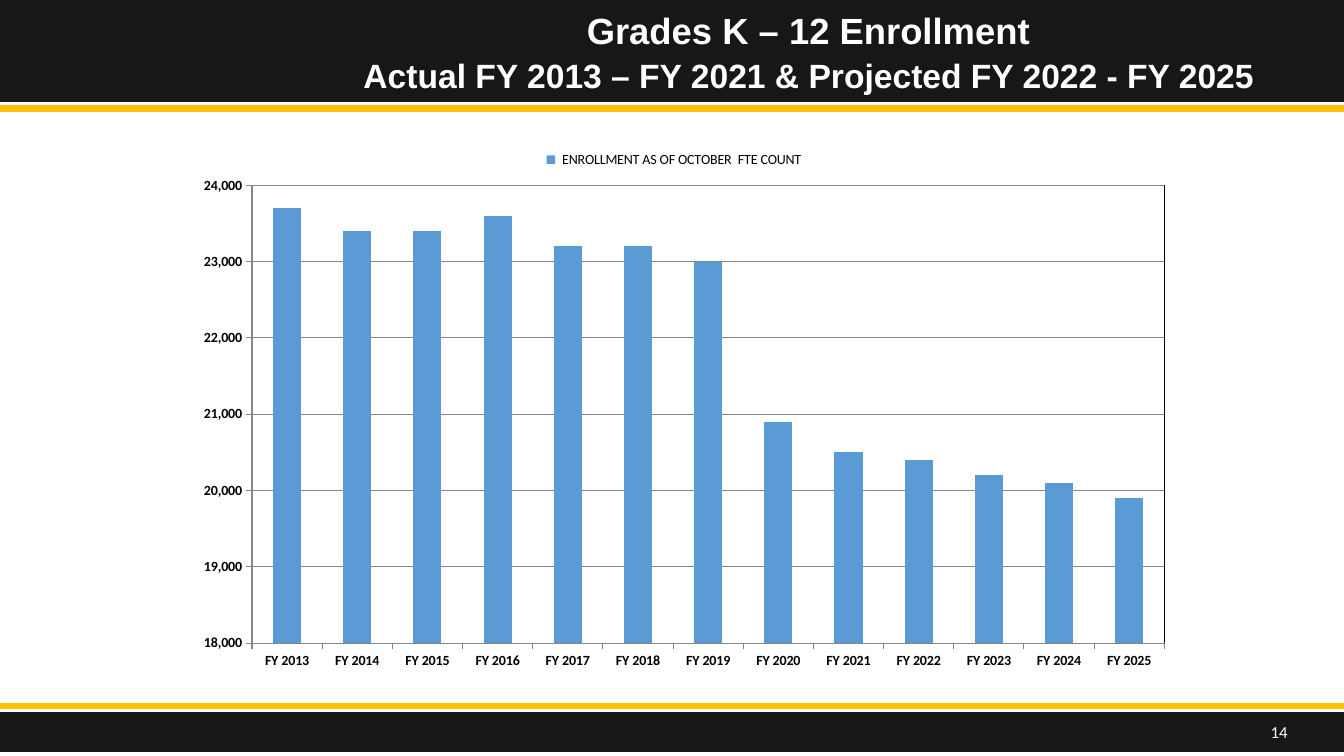
from dataclasses import dataclass

from lxml.etree import SubElement
from pptx import Presentation
from pptx.chart.chart import Chart
from pptx.chart.data import CategoryChartData
from pptx.dml.color import RGBColor
from pptx.enum.chart import XL_CHART_TYPE, XL_LEGEND_POSITION, XL_TICK_MARK
from pptx.enum.shapes import MSO_SHAPE
from pptx.enum.text import MSO_ANCHOR, MSO_AUTO_SIZE, PP_ALIGN
from pptx.oxml import parse_xml
from pptx.oxml.ns import nsdecls, qn
from pptx.slide import Slide
from pptx.text.text import TextFrame
from pptx.util import Inches, Pt

COLORS = {
    "band": "181717",
    "stripe": "FFC000",
    "light": "FFFFFF",
    "ink": "000000",
    "column": "5B9BD5",
    "rule": "868686",
}
SLIDE_WIDTH, SLIDE_HEIGHT = Inches(13.33), Inches(7.5)


@dataclass(frozen=True)
class Area:
    """A place on the slide, in percent of its width and height."""
    left: float
    top: float
    width: float
    height: float

    def lengths(self) -> tuple[int, int, int, int]:
        return (int(SLIDE_WIDTH * self.left / 100), int(SLIDE_HEIGHT * self.top / 100),
                int(SLIDE_WIDTH * self.width / 100), int(SLIDE_HEIGHT * self.height / 100))


@dataclass(frozen=True)
class Band:
    top: float
    height: float
    color: str


BANDS = [
    Band(0, 13.47, "band"),
    Band(14, 0.67, "stripe"),
    Band(94.27, 5.07, "band"),
    Band(93.07, 0.67, "stripe"),
]
HEADING_AREA = Area(22.81, 0, 74.72, 13.47)
PAGE_NUMBER_AREA = Area(74.04, 94.13, 22.51, 5.33)
CHART_AREA = Area(11.7, 18.13, 76.89, 85.47)

FIRST_YEAR = 2013
ENROLLMENT = [23700, 23400, 23400, 23600, 23200, 23200, 23000,
              20900, 20500, 20400, 20200, 20100, 19900]


def rgb(name: str) -> RGBColor:
    return RGBColor.from_string(COLORS[name])


def draw_band(slide: Slide, band: Band) -> None:
    strip = slide.shapes.add_shape(
        MSO_SHAPE.RECTANGLE, *Area(0, band.top, 100, band.height).lengths())
    strip.shadow.inherit = False
    strip.fill.solid()
    strip.fill.fore_color.rgb = rgb(band.color)
    strip.line.color.rgb = rgb(band.color)
    strip.line.width = Pt(1)


def write(frame: TextFrame, text: str, *, sizes: list[float], font: str,
          align: PP_ALIGN, anchor: MSO_ANCHOR, bold: bool = False,
          spacing: float = 1.0) -> None:
    """Write one paragraph per line of text, each with its own size."""
    frame.text = text
    frame.word_wrap = True
    frame.auto_size = MSO_AUTO_SIZE.NONE
    frame.vertical_anchor = anchor
    for paragraph, size in zip(frame.paragraphs, sizes):
        paragraph.alignment = align
        paragraph.line_spacing = spacing
        paragraph.space_before = Pt(0)
        paragraph.font.name = font
        paragraph.font.size = Pt(size)
        paragraph.font.bold = bold
        paragraph.font.color.rgb = rgb("light")


def manual_layout(x: float, y: float, width: float, height: float, inner: bool = False):
    """Place a chart part by shares of the chart's size."""
    layout = parse_xml(f"<c:layout {nsdecls('c')}><c:manualLayout/></c:layout>")
    settings = [("layoutTarget", "inner")] if inner else []
    settings += [("xMode", "edge"), ("yMode", "edge"),
                 ("x", x), ("y", y), ("w", width), ("h", height)]
    for tag, value in settings:
        SubElement(layout[0], qn(f"c:{tag}")).set("val", str(value))
    return layout


def place_chart_parts(chart: Chart) -> None:
    chart_space = chart._chartSpace
    plot_area = chart_space.chart.plotArea
    for old_layout in plot_area.findall(qn("c:layout")):
        plot_area.remove(old_layout)
    plot_area.insert(0, manual_layout(0.09, 0.08, 0.88, 0.71, inner=True))
    # Exact plot edges as shares of the chart frame
    edges = plot_area[0][0]
    for tag, inches, whole in (("x", 0.94, 10.25), ("y", 0.48, 6.41),
                               ("w", 9.05, 10.25), ("h", 4.54, 6.41)):
        edges.find(qn(f"c:{tag}")).set("val", str(round(inches / whole, 4)))
    plot_area.append(parse_xml(
        f"<c:spPr {nsdecls('c', 'a')}><a:noFill/><a:ln w='9525'><a:solidFill>"
        f"<a:srgbClr val='{COLORS['ink']}'/></a:solidFill></a:ln></c:spPr>"))
    chart_space.chart.addnext(parse_xml(
        f"<c:spPr {nsdecls('c', 'a')}><a:noFill/><a:ln><a:noFill/></a:ln></c:spPr>"))
    legend = chart.legend._element
    for old_layout in legend.findall(qn("c:layout")):
        legend.remove(old_layout)
    legend.find(qn("c:legendPos")).addnext(manual_layout(0.37, 0.02, 0.26, 0.03))


def draw_enrollment_chart(slide: Slide) -> None:
    data = CategoryChartData(number_format="#,##0")
    data.categories = [f"FY {FIRST_YEAR + i}" for i in range(len(ENROLLMENT))]
    data.add_series(" ENROLLMENT AS OF OCTOBER  FTE COUNT", ENROLLMENT)
    chart = slide.shapes.add_chart(
        XL_CHART_TYPE.COLUMN_CLUSTERED, *CHART_AREA.lengths(), data).chart
    chart.has_title = False
    chart.font.name = "Calibri"
    chart.font.size = Pt(10)
    chart.font.color.rgb = rgb("ink")

    # Columns
    columns = chart.plots[0]
    columns.gap_width = 150
    columns.vary_by_categories = False
    enrollment = columns.series[0]
    enrollment.format.fill.solid()
    enrollment.format.fill.fore_color.rgb = rgb("column")

    # Axes and gridlines
    for axis in (chart.category_axis, chart.value_axis):
        axis.major_tick_mark = XL_TICK_MARK.OUTSIDE
        axis.minor_tick_mark = XL_TICK_MARK.NONE
        axis.format.line.color.rgb = rgb("rule")
        axis.tick_labels.font.bold = True
        axis.tick_labels.font.size = Pt(10)
        axis.tick_labels.font.color.rgb = rgb("ink")
    counts = chart.value_axis
    counts.minimum_scale, counts.maximum_scale, counts.major_unit = 18000, 24000, 1000
    counts.tick_labels.number_format = "#,##0"
    counts.tick_labels.number_format_is_linked = False
    counts.has_major_gridlines = True
    counts.major_gridlines.format.line.color.rgb = rgb("rule")

    # Legend
    chart.has_legend = True
    chart.legend.position = XL_LEGEND_POSITION.TOP
    chart.legend.include_in_layout = False
    chart.legend.font.size = Pt(10)
    chart.legend.font.color.rgb = rgb("ink")
    place_chart_parts(chart)


def main() -> None:
    deck = Presentation()
    deck.slide_width, deck.slide_height = SLIDE_WIDTH, SLIDE_HEIGHT
    slide = deck.slides.add_slide(deck.slide_layouts[5])

    # Header and footer bands
    for band in BANDS:
        draw_band(slide, band)

    # Page number
    page_number = slide.shapes.add_textbox(*PAGE_NUMBER_AREA.lengths())
    write(page_number.text_frame, "14", sizes=[12], font="Calibri",
          align=PP_ALIGN.RIGHT, anchor=MSO_ANCHOR.MIDDLE)

    # Heading, brought in front of the bands
    heading = slide.shapes.title
    heading.left, heading.top, heading.width, heading.height = HEADING_AREA.lengths()
    write(heading.text_frame,
          "Grades K – 12 Enrollment\nActual FY 2013 – FY 2021 & Projected FY 2022 - FY 2025",
          sizes=[26, 24], font="Arial", align=PP_ALIGN.CENTER,
          anchor=MSO_ANCHOR.TOP, bold=True, spacing=1.07)
    slide.shapes._spTree.append(heading._element)

    draw_enrollment_chart(slide)
    deck.save("out.pptx")


if __name__ == "__main__":
    main()
